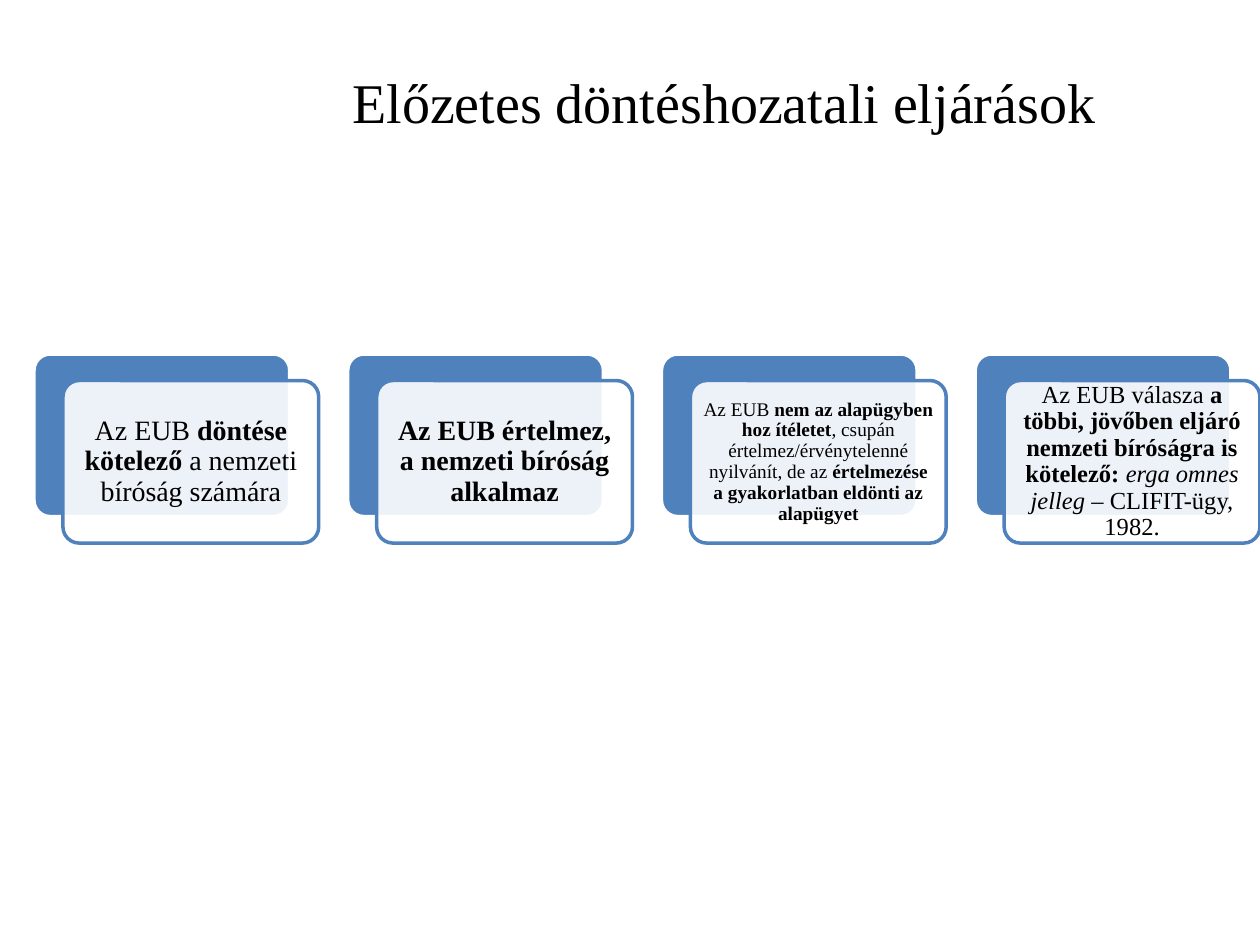
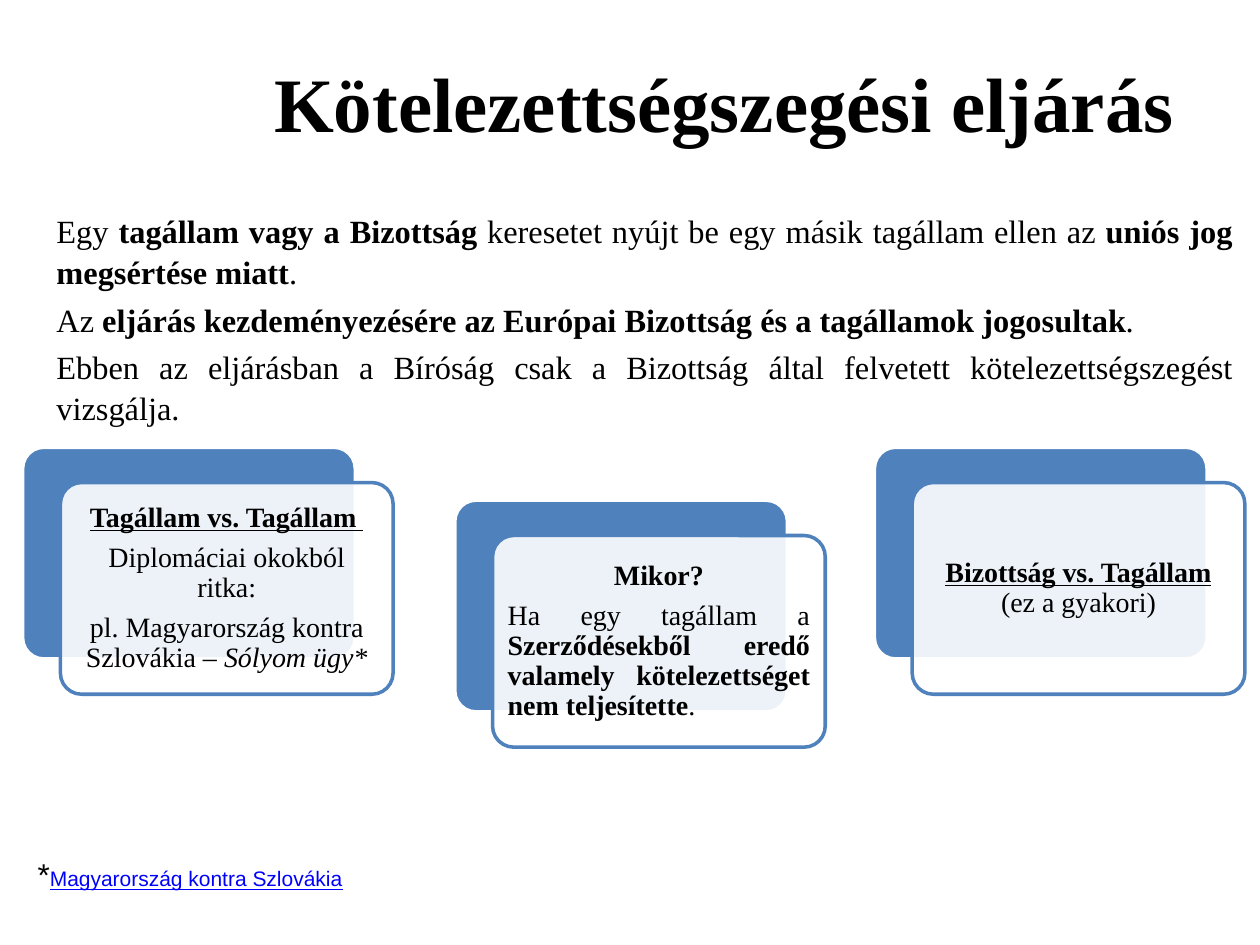
from dataclasses import dataclass

import pptx
import pptx.dml.color
import pptx.enum.shapes
import pptx.enum.text
import pptx.oxml
import pptx.oxml.ns
import pptx.util
from pptx.util import Inches

SERIF = "Times New Roman"
SANS = "Arial"
BLACK = "000000"
WHITE = "FFFFFF"
BLUE = "4F81BD"
LINK_BLUE = "0000FF"

ALIGN = pptx.enum.text.PP_ALIGN
ANCHOR = pptx.enum.text.MSO_ANCHOR
AUTO_SIZE = pptx.enum.text.MSO_AUTO_SIZE


@dataclass(frozen=True)
class Run:
    text: str
    bold: bool = False
    italic: bool = False
    underline: bool = False
    size: float | None = None
    color: str = BLACK


@dataclass(frozen=True)
class Paragraph:
    runs: list[Run]
    align: ALIGN = ALIGN.CENTER


@dataclass(frozen=True)
class TextStyle:
    size: float
    font: str = SERIF
    line_spacing: float | None = None
    before: float = 0
    after: float = 0


@dataclass(frozen=True)
class CardStyle:
    """Measures in inches of a blue panel with a white card shifted over it."""
    width: float
    height: float
    shift_x: float
    shift_y: float
    label_inset: float


@dataclass(frozen=True)
class Card:
    left: float
    top: float
    paragraphs: list[Paragraph]
    size: float = 16
    margin: float = 0.07


def rgb(color: str) -> pptx.dml.color.RGBColor:
    return pptx.dml.color.RGBColor.from_string(color)


def write_text(frame, paragraphs: list[Paragraph], style: TextStyle) -> None:
    for index, content in enumerate(paragraphs):
        paragraph = frame.add_paragraph() if index else frame.paragraphs[0]
        paragraph.alignment = content.align
        paragraph.line_spacing = style.line_spacing
        paragraph.space_before = pptx.util.Pt(style.before if index else 0)
        paragraph.space_after = pptx.util.Pt(style.after)
        for part in content.runs:
            run = paragraph.add_run()
            run.text = part.text
            run.font.name = style.font
            run.font.size = pptx.util.Pt(part.size or style.size)
            run.font.bold = part.bold
            run.font.italic = part.italic
            run.font.underline = part.underline
            run.font.color.rgb = rgb(part.color)


def add_text_box(slide, left: float, top: float, width: float, height: float):
    """Adds a wrapping text box and gives back its text frame."""
    box = slide.shapes.add_textbox(
        Inches(left), Inches(top), Inches(width), Inches(height))
    box.text_frame.word_wrap = True
    return box.text_frame


def add_titled_slide(presentation, title: Run):
    slide = presentation.slides.add_slide(presentation.slide_layouts[5])
    shape = slide.shapes.title
    shape.left, shape.top = Inches(1.5), Inches(0)
    shape.width, shape.height = Inches(8.5), Inches(1.61)
    frame = shape.text_frame
    frame.vertical_anchor = ANCHOR.MIDDLE
    frame.auto_size = AUTO_SIZE.NONE
    write_text(frame, [Paragraph([title])], TextStyle(title.size))
    return slide


def add_panel(slide, left: float, top: float, style: CardStyle,
              fill: str, line: str, opacity: int = 100) -> None:
    shape = slide.shapes.add_shape(
        pptx.enum.shapes.MSO_SHAPE.ROUNDED_RECTANGLE,
        Inches(left), Inches(top), Inches(style.width), Inches(style.height))
    shape.adjustments[0] = 0.1
    shape.shadow.inherit = False
    shape.fill.solid()
    shape.fill.fore_color.rgb = rgb(fill)
    shape.line.color.rgb = rgb(line)
    shape.line.width = pptx.util.Pt(2)
    if opacity < 100:
        qn = pptx.oxml.ns.qn
        color = shape.fill._xPr.find(qn("a:solidFill")).find(qn("a:srgbClr"))
        color.append(pptx.oxml.parse_xml(
            f'<a:alpha {pptx.oxml.ns.nsdecls("a")} val="{opacity * 1000}"/>'))


def add_card(slide, card: Card, style: CardStyle) -> None:
    left, top = card.left + style.shift_x, card.top + style.shift_y
    add_panel(slide, card.left, card.top, style, BLUE, WHITE)
    add_panel(slide, left, top, style, WHITE, BLUE, opacity=90)

    inset = style.label_inset
    frame = add_text_box(slide, left + inset, top + inset,
                         style.width - 2 * inset, style.height - 2 * inset)
    frame.vertical_anchor = ANCHOR.MIDDLE
    frame.margin_left = frame.margin_right = Inches(card.margin)
    frame.margin_top = frame.margin_bottom = Inches(card.margin)
    write_text(frame, card.paragraphs,
               TextStyle(card.size, line_spacing=0.9, after=0.35 * card.size))


def build_preliminary_rulings(presentation) -> None:
    slide = add_titled_slide(
        presentation, Run("Előzetes döntéshozatali eljárások", size=32))
    style = CardStyle(2.03, 1.29, 0.23, 0.21, 0.04)
    rulings = [
        (16, 0.07, [
            Run("Az EUB "),
            Run("döntése kötelező ", bold=True),
            Run("a nemzeti bíróság számára")]),
        (16, 0.07, [
            Run("Az EUB értelmez, a nemzeti bíróság alkalmaz", bold=True)]),
        (11, 0.05, [
            Run("Az EUB "),
            Run("nem az alapügyben hoz ítéletet", bold=True),
            Run(", csupán értelmez/érvénytelenné nyilvánít, de az "),
            Run("értelmezése a gyakorlatban eldönti az alapügyet", bold=True)]),
        (14, 0.06, [
            Run("Az EUB válasza "),
            Run("a többi, jövőben eljáró nemzeti bíróságra is kötelező: ",
                bold=True),
            Run("erga omnes jelleg ", italic=True),
            Run("– CLIFIT-ügy, 1982.")]),
    ]
    for column, (size, margin, runs) in enumerate(rulings):
        left = 0.27 + 2.49 * column
        add_card(slide, Card(left, 2.81, [Paragraph(runs)], size, margin), style)


def build_infringement_procedure(presentation) -> None:
    slide = add_titled_slide(
        presentation, Run("Kötelezettségszegési eljárás", bold=True, size=44))

    summary = [
        [Run("Egy "),
         Run("tagállam vagy a Bizottság ", bold=True),
         Run("keresetet nyújt be egy másik tagállam ellen az "),
         Run("uniós jog megsértése miatt", bold=True),
         Run(".")],
        [Run("Az "),
         Run("eljárás kezdeményezésére az Európai Bizottság és a tagállamok "
             "jogosultak", bold=True),
         Run(".")],
        [Run("Ebben az eljárásban a Bíróság csak a Bizottság által felvetett "
             "kötelezettségszegést vizsgálja.")],
    ]
    frame = add_text_box(slide, 0.35, 1.7, 9.53, 1.65)
    frame.vertical_anchor = ANCHOR.MIDDLE
    write_text(frame, [Paragraph(runs, ALIGN.JUSTIFY) for runs in summary],
               TextStyle(18.5, line_spacing=1.05, before=3.7))

    style = CardStyle(2.64, 1.68, 0.3, 0.28, 0.05)
    state_against_state = Card(0.18, 3.55, [
        Paragraph([Run("Tagállam vs. Tagállam ", bold=True, underline=True)]),
        Paragraph([Run("Diplomáciai okokból ritka:")]),
        Paragraph([Run("pl. Magyarország kontra Szlovákia – "),
                   Run("Sólyom ügy*", italic=True)]),
    ])
    commission_against_state = Card(6.94, 3.55, [
        Paragraph([Run("Bizottság vs. Tagállam ", bold=True, underline=True),
                   Run("(ez a gyakori)")]),
    ])
    grounds = Card(3.61, 3.97, [
        Paragraph([Run("Mikor?", bold=True)]),
        Paragraph([Run("Ha egy tagállam a "),
                   Run("Szerződésekből eredő valamely kötelezettséget nem "
                       "teljesítette", bold=True),
                   Run(".")], ALIGN.JUSTIFY),
    ])
    for card in (state_against_state, commission_against_state, grounds):
        add_card(slide, card, style)

    footnote = add_text_box(slide, 0.2, 6.74, 8.82, 0.4)
    footnote.auto_size = AUTO_SIZE.SHAPE_TO_FIT_TEXT
    write_text(footnote, [Paragraph([
        Run("*", size=18),
        Run("Magyarország kontra Szlovákia", underline=True, color=LINK_BLUE),
    ], ALIGN.LEFT)], TextStyle(12, SANS))


def main() -> None:
    presentation = pptx.Presentation()
    presentation.slide_width = Inches(10)
    presentation.slide_height = Inches(7.5)
    build_preliminary_rulings(presentation)
    build_infringement_procedure(presentation)
    presentation.save("out.pptx")


if __name__ == "__main__":
    main()
